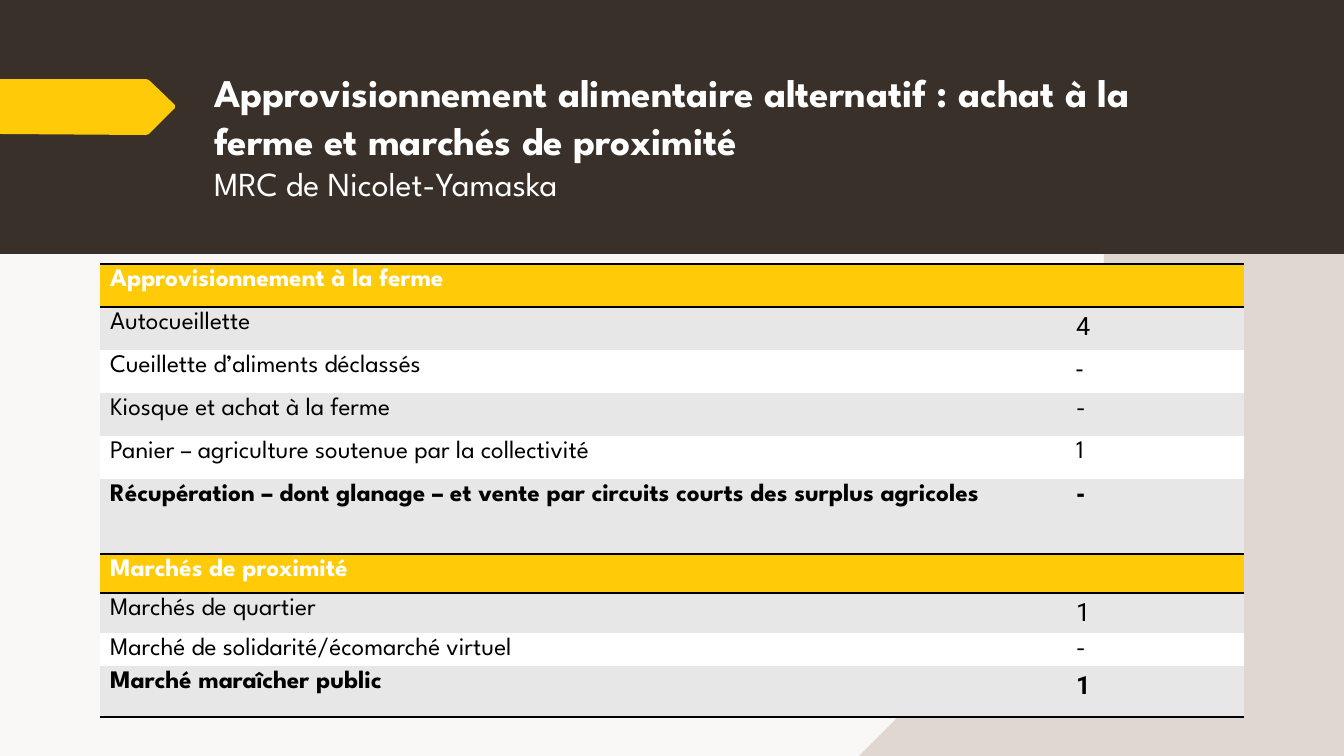
from lxml import etree
from pptx import Presentation
from pptx.dml.color import RGBColor
from pptx.enum.text import MSO_ANCHOR as Anchor, MSO_AUTO_SIZE as AutoSize, PP_ALIGN as Align
from pptx.enum.shapes import MSO_SHAPE as Shape
from pptx.oxml.ns import qn
from pptx.util import Emu, Pt

PX = 914400 / 100.8
NO_STYLE = "{2D5ABB26-0587-4C30-8999-92F81FD0307C}"
SPARTAN, ROBOTO = "League Spartan", "Roboto"
CREAM, TAUPE, BROWN, YELLOW = "F9F8F7", "E0D7D3", "39302A", "FFCA08"
GREY, WHITE, BLACK = "E7E7E7", "FFFFFF", "000000"


def px(n):
    return Emu(round(n * PX))


def rgb(colour):
    return RGBColor.from_string(colour)


def fill(target, colour):
    target.fill.solid()
    target.fill.fore_color.rgb = rgb(colour)


class Deck:
    def __init__(self, width, height):
        self.prs = Presentation()
        self.prs.slide_width, self.prs.slide_height = px(width), px(height)
        self.slide = self.prs.slides.add_slide(self.prs.slide_layouts[5])
        self.shapes = self.slide.shapes

    def background(self, colour):
        fill(self.slide.background, colour)

    def flat(self, s, colour):
        """Give a shape a plain fill without line or shadow."""
        fill(s, colour)
        s.line.fill.background()
        s.shadow.inherit = False

    def rect(self, x, y, w, h, colour):
        s = self.shapes.add_shape(Shape.RECTANGLE, px(x), px(y), px(w), px(h))
        self.flat(s, colour)

    def polygon(self, points, colour):
        builder = self.shapes.build_freeform(*points[0], scale=PX)
        builder.add_line_segments(points[1:], close=True)
        self.flat(builder.convert_to_shape(), colour)

    def run(self, p, text, size, colour, bold=False, font=SPARTAN):
        r = p.add_run()
        r.text = text
        r.font.name, r.font.size, r.font.bold = font, Pt(size), bold
        r.font.color.rgb = rgb(colour)

    def title(self, x, y, w, h, heading, subtitle):
        s = self.shapes.title
        s.left, s.top, s.width, s.height = px(x), px(y), px(w), px(h)
        self.shapes._spTree.append(s._element)  # bring above the band
        tf = s.text_frame
        tf.word_wrap, tf.auto_size = True, AutoSize.NONE
        tf.vertical_anchor = Anchor.MIDDLE
        p = tf.paragraphs[0]
        p.alignment = Align.LEFT
        self.run(p, heading, 28, WHITE, bold=True)
        p.add_line_break()
        self.run(p, subtitle, 24, WHITE)

    def rule(self, cell, *sides):
        """Draw a black border on the given sides ("T", "B") of a cell."""
        for i, side in enumerate(sides):
            ln = etree.Element(qn(f"a:ln{side}"), w=str(Pt(2)))
            solid = etree.SubElement(ln, qn("a:solidFill"))
            etree.SubElement(solid, qn("a:srgbClr"), val=BLACK)
            cell._tc.get_or_add_tcPr().insert(i, ln)

    def table(self, x, y, widths, heights, heading, rows):
        """Add a section table: yellow heading, banded rows, bold last row."""
        frame = self.shapes.add_table(len(heights), len(widths), px(x), px(y),
                                      px(sum(widths)), px(sum(heights)))
        table = frame.table
        table._tbl.tblPr.find(qn("a:tableStyleId")).text = NO_STYLE
        for column, width in zip(table.columns, widths):
            column.width = px(width)
        for row, height in zip(table.rows, heights):
            row.height = px(height)

        label, blank = table.rows[0].cells
        blank.margin_top = blank.margin_bottom = 0
        self.run(label.text_frame.paragraphs[0], heading, 18, WHITE, bold=True)
        for cell in (label, blank):
            fill(cell, YELLOW)
            self.rule(cell, "T", "B")

        for i, (name, value, font) in enumerate(rows, 1):
            last = i == len(rows)
            for j, (text, face) in enumerate([(name, SPARTAN), (value, font)]):
                cell = table.cell(i, j)
                fill(cell, GREY if i % 2 else WHITE)
                self.run(cell.text_frame.paragraphs[0], text, 18, BLACK, last, face)
                if last:
                    self.rule(cell, "B")


def main():
    deck = Deck(1344, 756)
    deck.background(CREAM)
    deck.polygon([(1104, 254), (1344, 254), (1344, 756), (859, 756), (1104, 510)], TAUPE)
    deck.rect(0, 0, 1344, 254, BROWN)
    deck.title(204, 56, 1034, 160,
               "Approvisionnement alimentaire alternatif : achat à la ferme et marchés de proximité",
               "MRC de Nicolet-Yamaska")
    deck.polygon([(0, 79), (146, 79), (149, 80), (175, 105), (175, 108),
                  (149, 134), (146, 135), (0, 134)], YELLOW)

    widths = [966, 178]
    deck.table(100, 264, widths, [43] * 5 + [75], "Approvisionnement à la ferme", [
        ("Autocueillette", "4", ROBOTO),
        ("Cueillette d’aliments déclassés", "-", ROBOTO),
        ("Kiosque et achat à la ferme", "-", SPARTAN),
        ("Panier – agriculture soutenue par la collectivité", "1", SPARTAN),
        ("Récupération – dont glanage – et vente par circuits courts des surplus agricoles",
         "-", SPARTAN),
    ])
    deck.table(100, 554, widths, [39, 40, 33, 51], "Marchés de proximité", [
        ("Marchés de quartier", "1", ROBOTO),
        ("Marché de solidarité/écomarché virtuel", "-", SPARTAN),
        ("Marché maraîcher public", "1", ROBOTO),
    ])
    deck.prs.save("out.pptx")


if __name__ == "__main__":
    main()
